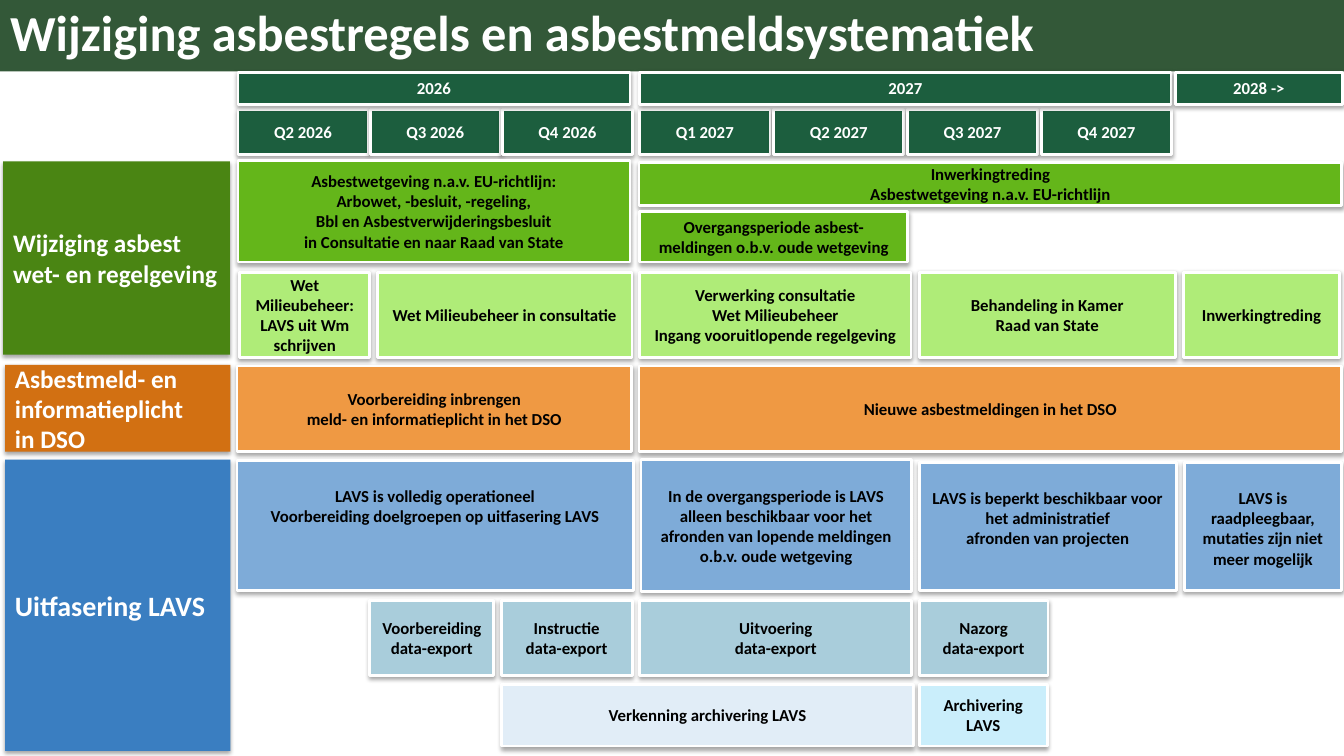
from lxml.etree import SubElement
from pptx import Presentation
from pptx.dml.color import RGBColor
from pptx.enum.shapes import MSO_SHAPE
from pptx.enum.text import MSO_ANCHOR, MSO_AUTO_SIZE, PP_ALIGN
from pptx.oxml.ns import qn
from pptx.util import Pt

COLORS = {
    "white": "FFFFFF", "black": "000000", "title": "335838", "time": "1C5E3E",
    "law topic": "4A8513", "duty topic": "D27012", "system topic": "3A7EC1",
    "law": "64B61A", "act": "AFEC78", "duty": "EF9943", "system": "7EABD8",
    "export": "A9CDDB", "archive": "E1EDF7", "archiving": "CAEEFB",
}
FONT = "Calibri"
SLIDE_WIDTH, SLIDE_HEIGHT = 960, 540
QUARTER_TOP, QUARTER_WIDTH, QUARTER_HEIGHT = 78.5, 93, 31.7

# top, height, colour, text size, text, left, width
TOPICS = [
    (115.2, 138.2, "law topic", 18, "Wijziging asbest wet- en regelgeving", 2.2, 162),
    (260.6, 62, "duty topic", 18, "Asbestmeld- en informatieplicht\nin DSO", 3.6, 161),
    (328.3, 208, "system topic", 20, "Uitfasering LAVS", 3.6, 161),
]

# first left, step, quarter names
QUARTERS = [
    (170, 94.4, ["Q2 2026", "Q3 2026", "Q4 2026"]),
    (457, 95.6, ["Q1 2027", "Q2 2027", "Q3 2027", "Q4 2027"]),
]

YEARS = [(170, 280, "2026"), (457, 379.5, "2027"), (839.5, 119.5, "2028 ->")]

# top, height, colour, boxes as (left, width, text)
ROWS = [
    (114.5, 72.7, "law", [
        (170, 280, "Asbestwetgeving n.a.v. EU-richtlijn:\nArbowet, -besluit, -regeling,\n"
                   "Bbl en Asbestverwijderingsbesluit\nin Consultatie en naar Raad van State")]),
    (116, 31, "law", [
        (456.5, 502, "Inwerkingtreding\nAsbestwetgeving n.a.v. EU-richtlijn")]),
    (151.2, 36, "law", [
        (457, 191.5, "Overgangsperiode asbest-meldingen o.b.v. oude wetgeving")]),
    (194.4, 61, "act", [
        (171.2, 93, "Wet Milieubeheer:\nLAVS uit Wm schrijven"),
        (269.5, 182, "Wet Milieubeheer in consultatie"),
        (457, 193.7, "Verwerking consultatie\nWet Milieubeheer\n"
                     "Ingang vooruitlopende regelgeving"),
        (656.6, 183, "Behandeling in Kamer\nRaad van State"),
        (845.3, 111.6, "Inwerkingtreding")]),
    (261.4, 61.2, "duty", [
        (169.3, 282, "Voorbereiding inbrengen\nmeld- en informatieplicht in het DSO"),
        (456.5, 502, "Nieuwe asbestmeldingen in het DSO")]),
    (328.3, 94.3, "system", [
        (457.9, 193, "In de overgangsperiode is LAVS alleen beschikbaar voor het "
                     "afronden van lopende meldingen o.b.v. oude wetgeving")]),
    (428.8, 53.5, "export", [
        (264.2, 88.6, "Voorbereiding\ndata-export"),
        (358, 93.6, "Instructie\ndata-export"),
        (457, 194.4, "Uitvoering\ndata-export"),
        (656.6, 92, "Nazorg\ndata-export")]),
    (488.9, 44, "archive", [(358.5, 293.8, "Verkenning archivering LAVS")]),
    (488.9, 44, "archiving", [(656.6, 91.5, "Archivering LAVS")]),
]

# Boxes whose text starts one line below the top edge
LOWERED_ROWS = [
    (329, 92.9, "system", [
        (169.3, 283, "LAVS is volledig operationeel\n"
                     "Voorbereiding doelgroepen op uitfasering LAVS")]),
    (330.5, 91.4, "system", [
        (656.6, 183.6, "LAVS is beperkt beschikbaar voor het administratief\n"
                       "afronden van projecten"),
        (846, 112.3, "LAVS is raadpleegbaar, mutaties zijn niet meer mogelijk")]),
]


def color(name):
    return RGBColor.from_string(COLORS[name])


def write_text(shape, text, size=12, text_color="black", align=PP_ALIGN.CENTER,
               anchor=MSO_ANCHOR.MIDDLE, top_margin=3.6, line_spacing=None):
    frame = shape.text_frame
    frame.word_wrap = True
    frame.auto_size = MSO_AUTO_SIZE.NONE
    frame.vertical_anchor = anchor
    frame.margin_top = Pt(top_margin)
    frame.text = text
    for paragraph in frame.paragraphs:
        paragraph.alignment = align
        paragraph.line_spacing = line_spacing
        for run in paragraph.runs:
            font = run.font
            font.name, font.size, font.bold = FONT, Pt(size), True
            font.color.rgb = color(text_color)


class Roadmap:
    def __init__(self, slide):
        self.slide = slide

    def title(self, text):
        shape = self.slide.shapes.title
        shape.left, shape.top = Pt(0), Pt(-0.7)
        shape.width, shape.height = Pt(SLIDE_WIDTH), Pt(51.8)
        shape.fill.solid()
        shape.fill.fore_color.rgb = color("title")
        write_text(shape, text, size=36, text_color="white",
                   align=PP_ALIGN.LEFT, line_spacing=0.9)

    def box(self, left, top, width, height, fill, text, outlined=True, **text_format):
        shape = self.slide.shapes.add_shape(
            MSO_SHAPE.RECTANGLE, Pt(left), Pt(top), Pt(width), Pt(height))
        shape.fill.solid()
        shape.fill.fore_color.rgb = color(fill)
        if outlined:
            shape.line.color.rgb = color("white")
            shape.line.width = Pt(2)
        else:
            shape.line.fill.background()
        self.soft_shadow(shape)
        write_text(shape, text, **text_format)

    def soft_shadow(self, shape):
        shape.shadow.inherit = False
        effects = shape._element.spPr.find(qn("a:effectLst"))
        shadow = SubElement(effects, qn("a:outerShdw"), blurRad=str(Pt(3.1)),
                            dist=str(Pt(1.8)), dir="5400000", rotWithShape="0")
        shade = SubElement(shadow, qn("a:srgbClr"), val=COLORS["black"])
        SubElement(shade, qn("a:alpha"), val="35000")

    def row(self, top, height, fill, boxes, **text_format):
        for left, width, text in boxes:
            self.box(left, top, width, height, fill, text, **text_format)


def main():
    presentation = Presentation()
    presentation.slide_width, presentation.slide_height = Pt(SLIDE_WIDTH), Pt(SLIDE_HEIGHT)
    roadmap = Roadmap(presentation.slides.add_slide(presentation.slide_layouts[5]))

    roadmap.title("Wijziging asbestregels en asbestmeldsystematiek")
    for top, height, fill, size, text, left, width in TOPICS:
        roadmap.box(left, top, width, height, fill, text, outlined=False,
                    size=size, text_color="white", align=PP_ALIGN.LEFT)
    for first_left, step, names in QUARTERS:
        boxes = [(first_left + i * step, QUARTER_WIDTH, name) for i, name in enumerate(names)]
        roadmap.row(QUARTER_TOP, QUARTER_HEIGHT, "time", boxes, text_color="white")
    roadmap.row(51.5, 23, "time", YEARS, text_color="white")
    for row in ROWS:
        roadmap.row(*row)
    for row in LOWERED_ROWS:
        roadmap.row(*row, anchor=MSO_ANCHOR.TOP, top_margin=18)

    presentation.save("out.pptx")


if __name__ == "__main__":
    main()
